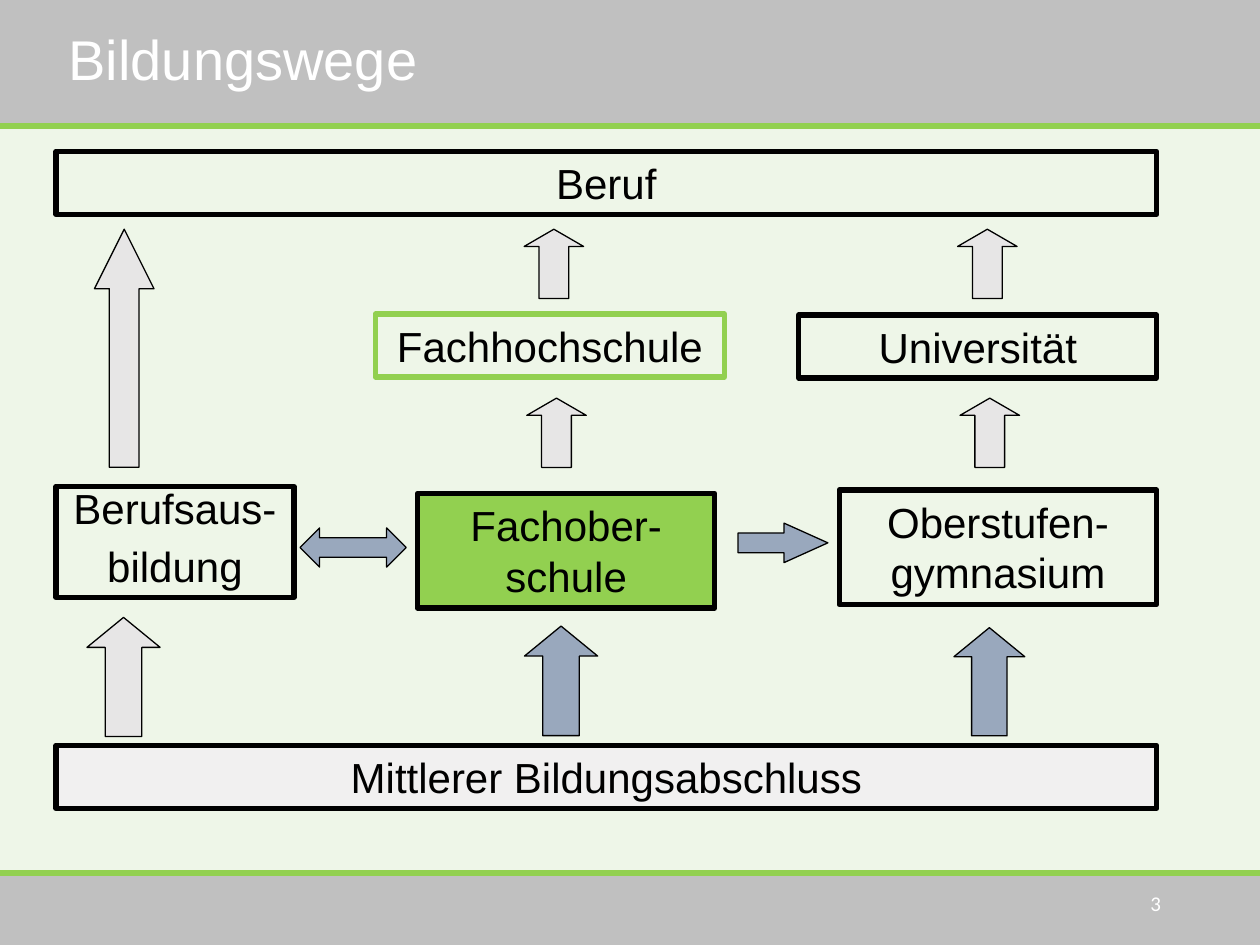
from pptx import Presentation
from pptx.dml.color import RGBColor
from pptx.enum.shapes import MSO_CONNECTOR, MSO_SHAPE
from pptx.enum.text import MSO_ANCHOR, MSO_AUTO_SIZE, PP_ALIGN
from pptx.oxml.ns import qn
from pptx.util import Pt
from lxml import etree

RECT = MSO_SHAPE.RECTANGLE
UP, RIGHT, BOTH = MSO_SHAPE.UP_ARROW, MSO_SHAPE.RIGHT_ARROW, MSO_SHAPE.LEFT_RIGHT_ARROW
STRAIGHT = MSO_CONNECTOR.STRAIGHT
TOP, MIDDLE = MSO_ANCHOR.TOP, MSO_ANCHOR.MIDDLE
GROW, FIXED = MSO_AUTO_SIZE.SHAPE_TO_FIT_TEXT, MSO_AUTO_SIZE.NONE
LEFT_ALIGNED, CENTER, RIGHT_ALIGNED = PP_ALIGN.LEFT, PP_ALIGN.CENTER, PP_ALIGN.RIGHT

BLACK = RGBColor(0x00, 0x00, 0x00)
WHITE = RGBColor(0xFF, 0xFF, 0xFF)
GREEN = RGBColor(0x92, 0xD0, 0x50)
PALE_GREEN = RGBColor(0xEE, 0xF6, 0xE8)
GRAY = RGBColor(0xC0, 0xC0, 0xC0)
LIGHT_GRAY = RGBColor(0xE7, 0xE6, 0xE6)
OFF_WHITE = RGBColor(0xF1, 0xF0, 0xF0)
BLUE_GRAY = RGBColor(0x99, 0xA8, 0xBD)

WIDTH, HEIGHT = 720, 540
LEFT, EDGE = 32, 661
BOX_H, TALL_H = 36, 65.5

# text, left, top, right, height, fill, outline
BOXES = [
    ("Mittlerer Bildungsabschluss", LEFT, 426, EDGE, BOX_H, OFF_WHITE, BLACK),
    ("Beruf", LEFT, 86.5, EDGE, BOX_H, None, BLACK),
    ("Fachhochschule", 214.5, 179.5, 414, BOX_H, None, GREEN),
    ("Universität", 456.5, 180, EDGE, BOX_H, None, BLACK),
    ("Oberstufen-gymnasium", 479.5, 280, EDGE, TALL_H, None, BLACK),
    ("Fachober-schule", 238.5, 282, 408.5, TALL_H, GREEN, BLACK),
]

# kind, left, top, width, height, head length relative to the short side, fill
ARROWS = [
    (UP, 49.7, 352.8, 41.8, 68, 0.41, LIGHT_GRAY),
    (UP, 299.7, 357.8, 41.8, 62.6, 0.41, BLUE_GRAY),
    (UP, 545.1, 358.7, 40.5, 61.8, 0.41, BLUE_GRAY),
    (UP, 54, 131, 34, 136, 1, LIGHT_GRAY),
    (RIGHT, 421.8, 298.9, 51.3, 22.6, 1.11, BLUE_GRAY),
    (BOTH, 171.4, 301.7, 60.7, 22.4, 0.5, BLUE_GRAY),
]
SMALL_ARROWS = [(299.5, 131), (301, 227.5), (547.2, 131), (548.6, 227.5)]


def add_shape(s, kind, left, top, width, height, fill, outline=None, weight=0.75):
    sp = s.shapes.add_shape(kind, Pt(left), Pt(top), Pt(width), Pt(height))
    sp.shadow.inherit = False
    if fill is None:
        sp.fill.background()
    else:
        sp.fill.solid()
        sp.fill.fore_color.rgb = fill
    if outline is None:
        sp.line.fill.background()
    else:
        sp.line.color.rgb = outline
        sp.line.width = Pt(weight)
    return sp


def set_text(sp, text, size, color, align, anchor, auto_size=FIXED, font="Arial"):
    tf = sp.text_frame
    tf.text = text
    tf.word_wrap = True
    tf.auto_size = auto_size
    tf.vertical_anchor = anchor
    for p in tf.paragraphs:
        p.alignment = align
        for r in p.runs:
            r.font.name = font
            r.font.size = Pt(size)
            r.font.color.rgb = color
    return tf


def add_box(s, text, left, top, right, height, fill, outline):
    sp = add_shape(s, RECT, left, top, right - left, height, fill, outline, 3)
    return set_text(sp, text, 24, BLACK, CENTER, TOP, GROW)


def add_arrow(s, kind, left, top, width, height, head, fill):
    sp = add_shape(s, kind, left, top, width, height, fill, BLACK)
    sp.adjustments[0] = 0.5
    sp.adjustments[1] = head


def add_rule(s, y):
    line = s.shapes.add_connector(STRAIGHT, Pt(0), Pt(y), Pt(WIDTH), Pt(y))
    line.line.color.rgb = GREEN
    line.line.width = Pt(3.5)
    etree.SubElement(line.element.spPr, qn("a:effectLst"))


def add_frame(s):
    """Draw the header and footer bars, the title and the page number."""
    s.background.fill.solid()
    s.background.fill.fore_color.rgb = PALE_GREEN
    add_shape(s, RECT, 0, 500.5, WIDTH, 39.5, GRAY)
    add_shape(s, RECT, 0, 0, WIDTH, 72, GRAY)
    for y in (72, 499):
        add_rule(s, y)

    title = s.shapes.title
    title.element.getparent().append(title.element)  # in front of the header bar
    title.left, title.top, title.width, title.height = Pt(LEFT), Pt(0.5), Pt(441), Pt(70.5)
    tf = set_text(title, "Bildungswege", 32, WHITE, LEFT_ALIGNED, MIDDLE)
    tf.paragraphs[0].line_spacing = 0.9

    number = s.shapes.add_textbox(Pt(508.5), Pt(501.5), Pt(162), Pt(29))
    set_text(number, "3", 12, WHITE, RIGHT_ALIGNED, MIDDLE, font="Calibri")


def main():
    prs = Presentation()
    prs.slide_width, prs.slide_height = Pt(WIDTH), Pt(HEIGHT)
    s = prs.slides.add_slide(prs.slide_layouts[5])
    add_frame(s)

    for box in BOXES:
        add_box(s, *box)
    training = add_box(s, "Berufsaus-\nbildung", LEFT, 278, 168, 63.5, None, BLACK)
    first, second = training.paragraphs
    first.line_spacing = 0.8
    second.line_spacing = 0.7
    second.space_before = Pt(12)

    for arrow in ARROWS:
        add_arrow(s, *arrow)
    for left, top in SMALL_ARROWS:
        add_arrow(s, UP, left, top, 34, 39.6, 0.29, LIGHT_GRAY)

    prs.save("out.pptx")


if __name__ == "__main__":
    main()
